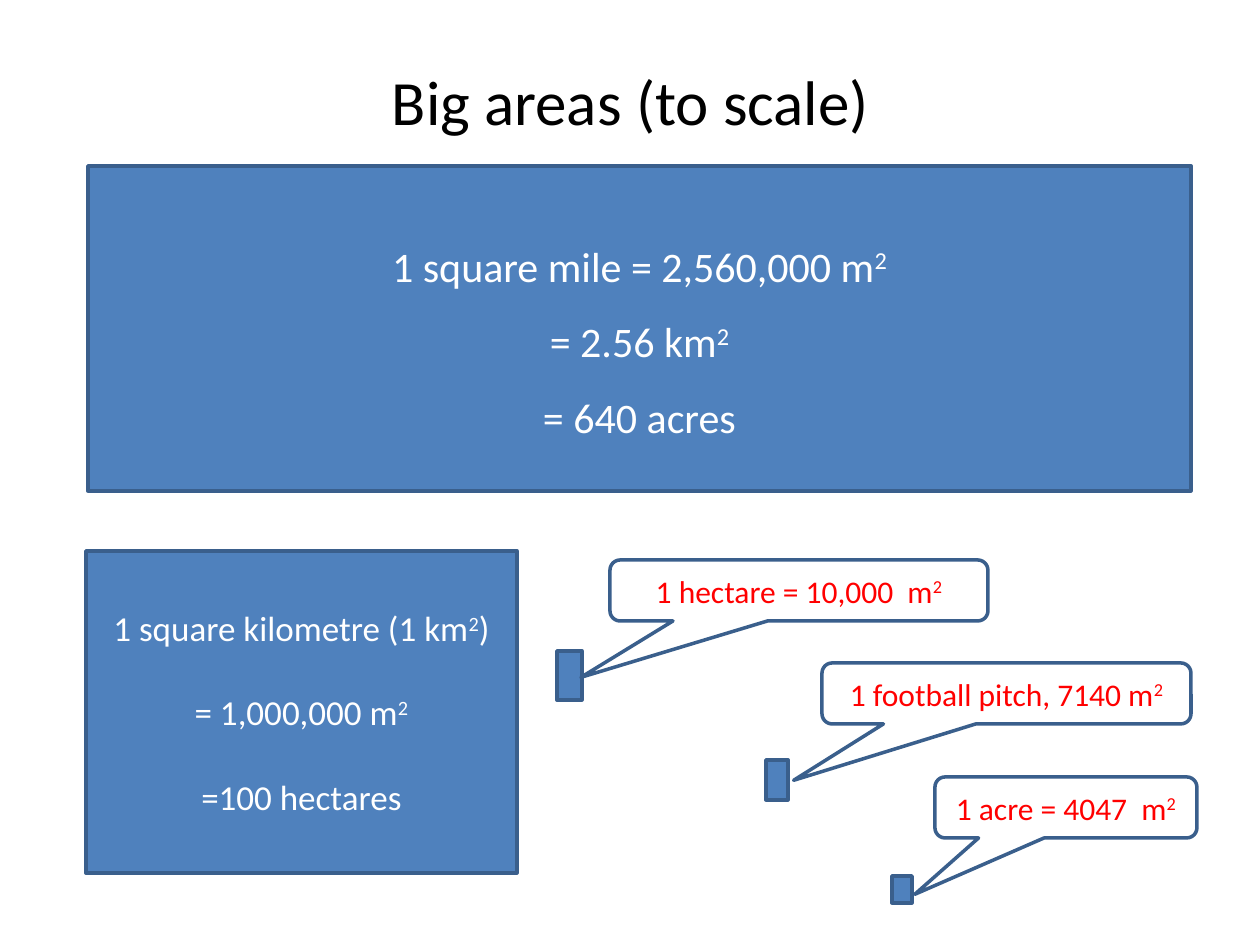
"""Build a slide that compares large areas drawn to scale."""
from pptx import Presentation
from pptx.dml.color import RGBColor
from pptx.enum.shapes import MSO_SHAPE
from pptx.enum.text import MSO_ANCHOR, PP_ALIGN
from pptx.util import Emu, Pt

RECT = MSO_SHAPE.RECTANGLE
CALLOUT = MSO_SHAPE.ROUNDED_RECTANGULAR_CALLOUT
CENTER = PP_ALIGN.CENTER
MIDDLE = MSO_ANCHOR.MIDDLE

PX = 914400 / 126
SLIDE = (1260, 945)
POINTER = (-0.577, 1.424, 0.167)
THEME = {
    "font": "Calibri", "title": "000000", "fill": "4F81BD", "line": "3A5F8C",
    "text": "FFFFFF", "label": "FF0000", "line_width": 2,
    "title_size": 36, "mile_size": 24, "km_size": 20, "label_size": 18,
}

TITLE = ("Big areas (to scale)", (95, 42, 1071, 116))
MILE = (["1 square mile = 2,560,000 m^2^", "= 2.56 km^2^", "= 640 acres"],
        (88, 166, 1103, 325))
KILOMETRE = (["1 square kilometre (1 km^2^)", "= 1,000,000 m^2^", "=100 hectares"],
             (86, 551, 431, 322))
SMALL_AREAS = [
    ("1 hectare = 10,000  m^2^", (557, 651, 25, 49), (610, 560, 378, 61)),
    ("1 football pitch, 7140 m^2^", (766, 760, 22, 40), (822, 663, 369, 61)),
    ("1 acre = 4047  m^2^", (892, 876, 20, 27), (935, 777, 262, 61)),
]


def emu(box):
    return [Emu(round(v * PX)) for v in box]


def rgb(name):
    return RGBColor.from_string(THEME[name])


def write(sp, lines, size, color, spacing=1.0, gap=0):
    """Write centred lines; text between carets is superscript."""
    tf = sp.text_frame
    tf.word_wrap = True
    tf.vertical_anchor = MIDDLE
    for i, line in enumerate(lines):
        p = tf.add_paragraph() if i else tf.paragraphs[0]
        p.alignment = CENTER
        p.line_spacing = spacing
        p.space_before = Pt(gap if i else 0)
        for j, part in enumerate(line.split("^")):
            if not part:
                continue
            r = p.add_run()
            r.text = part
            r.font.name = THEME["font"]
            r.font.size = Pt(THEME[size])
            r.font.color.rgb = rgb(color)
            if j % 2:
                r._r.get_or_add_rPr().set("baseline", "30000")


def add_area(slide, box, kind=RECT):
    sp = slide.shapes.add_shape(kind, *emu(box))
    sp.shadow.inherit = False
    sp.line.color.rgb = rgb("line")
    sp.line.width = Pt(THEME["line_width"])
    if kind == RECT:
        sp.fill.solid()
        sp.fill.fore_color.rgb = rgb("fill")
    else:
        sp.fill.background()
        for i, value in enumerate(POINTER):
            sp.adjustments[i] = value
    return sp


def main():
    prs = Presentation()
    prs.slide_width, prs.slide_height = emu(SLIDE)
    slide = prs.slides.add_slide(prs.slide_layouts[5])

    text, box = TITLE
    title = slide.shapes.title
    title.left, title.top, title.width, title.height = emu(box)
    write(title, [text], "title_size", "title")

    lines, box = MILE
    write(add_area(slide, box), lines, "mile_size", "text", spacing=1.5)
    lines, box = KILOMETRE
    write(add_area(slide, box), lines, "km_size", "text", gap=24)

    for label, box, callout in SMALL_AREAS:
        add_area(slide, box)
        write(add_area(slide, callout, CALLOUT), [label], "label_size", "label")

    prs.save("out.pptx")


if __name__ == "__main__":
    main()
